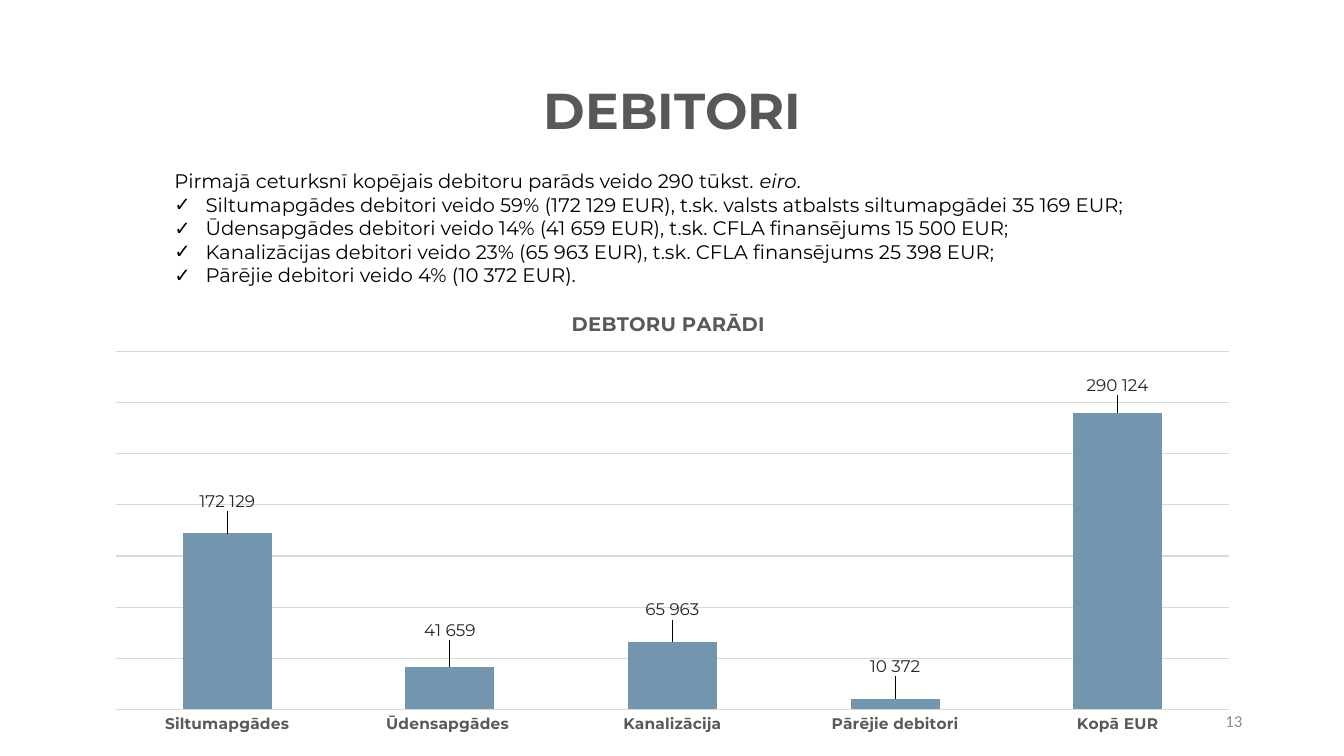
from pptx import Presentation
from pptx.chart.data import CategoryChartData
from pptx.dml.color import RGBColor
from pptx.enum.chart import XL_CHART_TYPE, XL_LABEL_POSITION, XL_TICK_LABEL_POSITION, XL_TICK_MARK
from pptx.enum.text import MSO_ANCHOR, MSO_AUTO_SIZE, PP_ALIGN
from pptx.oxml import parse_xml
from pptx.oxml.ns import nsdecls, qn
from pptx.util import Inches, Pt

BLACK = RGBColor(0x00, 0x00, 0x00)
HEADING_GREY = RGBColor(0x58, 0x58, 0x5B)
AXIS_GREY = RGBColor(0x59, 0x59, 0x59)
LABEL_GREY = RGBColor(0x26, 0x26, 0x26)
NUMBER_GREY = RGBColor(0x8C, 0x8C, 0x8C)
GRID_GREY = RGBColor(0xD9, 0xD9, 0xD9)
BAR_BLUE = RGBColor(0x73, 0x95, 0xAD)

SUMMARY = [("Pirmajā ceturksnī kopējais debitoru parāds veido 290 tūkst. ", False),
           ("eiro", True), (".", False)]
DETAILS = [
    "Siltumapgādes debitori veido 59% (172 129 EUR), t.sk. valsts atbalsts siltumapgādei 35 169 EUR;",
    "Ūdensapgādes debitori veido 14% (41 659 EUR), t.sk. CFLA finansējums 15 500 EUR;",
    "Kanalizācijas debitori veido 23% (65 963 EUR), t.sk. CFLA finansējums 25 398 EUR;",
    "Pārējie debitori veido 4% (10 372 EUR).",
]
DEBTS = {"Siltumapgādes": 172129, "Ūdensapgādes ": 41659, "Kanalizācija": 65963,
         "Pārējie debitori": 10372, "Kopā EUR": 290124}
LABEL_LIFTS = [0.04, 0.05, 0.04, 0.04, 0.03]


def style_font(font, size, color, bold=False, name="Montserrat"):
    """Set the typeface, size, colour and weight of a font."""
    font.name, font.size, font.bold = name, Pt(size), bold
    font.color.rgb = color


def add_run(paragraph, text, size, color, **style):
    """Append a styled run and return it."""
    run = paragraph.add_run()
    run.text = text
    style_font(run.font, size, color, **style)
    return run


def set_layout(parent, index, **fractions):
    """Give a chart part a manual layout in fractions of the chart."""
    for previous in parent.findall(qn("c:layout")):
        parent.remove(previous)
    values = "".join(f'<c:{key} val="{value}"/>' for key, value in fractions.items())
    parent.insert(index, parse_xml(
        f'<c:layout {nsdecls("c")}><c:manualLayout>{values}</c:manualLayout></c:layout>'))


def add_heading(slide, left, top, width, height):
    """Place the slide title in its box."""
    heading = slide.shapes.title
    heading.left, heading.top, heading.width, heading.height = left, top, width, height
    heading.text_frame.vertical_anchor = MSO_ANCHOR.MIDDLE
    paragraph = heading.text_frame.paragraphs[0]
    paragraph.alignment, paragraph.line_spacing = PP_ALIGN.CENTER, 0.9
    add_run(paragraph, "DEBITORI", 36, HEADING_GREY, bold=True)


def add_page_number(slide, left, top, width, height):
    """Place the page number at the right of its box."""
    frame = slide.shapes.add_textbox(left, top, width, height).text_frame
    frame.word_wrap, frame.vertical_anchor = True, MSO_ANCHOR.MIDDLE
    frame.paragraphs[0].alignment = PP_ALIGN.RIGHT
    add_run(frame.paragraphs[0], "13", 12, NUMBER_GREY, name="Calibri")


def add_summary(slide, left, top, width, height):
    """Write the summary sentence and its checked list."""
    frame = slide.shapes.add_textbox(left, top, width, height).text_frame
    frame.word_wrap, frame.auto_size = True, MSO_AUTO_SIZE.SHAPE_TO_FIT_TEXT
    for text, italic in SUMMARY:
        add_run(frame.paragraphs[0], text, 14, BLACK).font.italic = italic
    for detail in DETAILS:
        paragraph = frame.add_paragraph()
        properties = paragraph._p.get_or_add_pPr()
        properties.set("marL", str(Inches(0.31)))
        properties.set("indent", str(Inches(-0.31)))
        properties.append(parse_xml(f'<a:buFont {nsdecls("a")} typeface="Montserrat"/>'))
        properties.append(parse_xml(f'<a:buChar {nsdecls("a")} char="✓"/>'))
        add_run(paragraph, detail, 14, BLACK)


def style_axes(chart):
    """Show category names and gridlines only."""
    categories, amounts = chart.category_axis, chart.value_axis
    categories.major_tick_mark = XL_TICK_MARK.NONE
    categories.format.line.fill.background()
    style_font(categories.tick_labels.font, 11, AXIS_GREY, bold=True)
    amounts.minimum_scale, amounts.maximum_scale, amounts.major_unit = 0, 350000, 50000
    amounts.major_tick_mark = XL_TICK_MARK.NONE
    amounts.tick_label_position = XL_TICK_LABEL_POSITION.NONE
    amounts.format.line.fill.background()
    gridline = amounts.major_gridlines.format.line
    gridline.color.rgb, gridline.width = GRID_GREY, Pt(0.75)


def add_amounts(series):
    """Write each amount above its column, without leader lines."""
    labels = series.data_labels
    labels.show_value = True
    labels.number_format, labels.number_format_is_linked = "#,##0", False
    style_font(labels.font, 12, LABEL_GREY)
    for position, (amount, lift) in enumerate(zip(DEBTS.values(), LABEL_LIFTS)):
        label = series.points[position].data_label
        add_run(label.text_frame.paragraphs[0],
                f"{amount:,}".replace(",", " "), 12, LABEL_GREY)
        label.position = XL_LABEL_POSITION.OUTSIDE_END
        set_layout(label._get_or_add_dLbl(), 1, x=0, y=-lift)
    for leader in labels._element.findall(qn("c:showLeaderLines")):
        labels._element.remove(leader)
    labels._element.append(parse_xml(
        f'<c:extLst {nsdecls("c")}><c:ext uri="{{CE6537A1-D6FC-4f65-9D91-7224C49458BB}}" '
        'xmlns:c15="http://schemas.microsoft.com/office/drawing/2012/chart">'
        '<c15:showLeaderLines val="0"/></c:ext></c:extLst>'))


def add_debt_chart(slide, left, top, width, height):
    """Draw the debts as columns with an amount above each."""
    debts = CategoryChartData(number_format="#,##0")
    debts.categories = list(DEBTS)
    debts.add_series("Series 1", list(DEBTS.values()))
    chart = slide.shapes.add_chart(
        XL_CHART_TYPE.COLUMN_CLUSTERED, left, top, width, height, debts).chart
    style_font(chart.font, 10, BLACK, name="Calibri")
    chart.has_legend = False
    add_run(chart.chart_title.text_frame.paragraphs[0],
            "DEBTORU PARĀDI", 14, AXIS_GREY, bold=True)
    set_layout(chart.chart_title._element, 1, xMode="edge", yMode="edge", x=0.41, y=0.03)
    set_layout(chart._chartSpace.chart.plotArea, 0, layoutTarget="inner",
               xMode="edge", yMode="edge", x=0.02, y=0.13, w=0.96, h=0.8)
    style_axes(chart)
    columns = chart.plots[0]
    columns.gap_width, columns.vary_by_categories = 150, False
    series = columns.series[0]
    series.format.fill.solid()
    series.format.fill.fore_color.rgb = BAR_BLUE
    add_amounts(series)


def main():
    """Build the debtors slide and save it."""
    deck = Presentation()
    deck.slide_width, deck.slide_height = Inches(13.33), Inches(7.5)
    slide = deck.slides.add_slide(deck.slide_layouts[5])
    add_heading(slide, Inches(0.92), Inches(0.4), Inches(11.5), Inches(1.45))
    add_page_number(slide, Inches(9.42), Inches(6.95), Inches(3), Inches(0.4))
    add_summary(slide, Inches(1.63), Inches(1.63), Inches(10.35), Inches(1.28))
    add_debt_chart(slide, Inches(0.92), Inches(2.91), Inches(11.5), Inches(4.44))
    deck.save("out.pptx")


if __name__ == "__main__":
    main()
